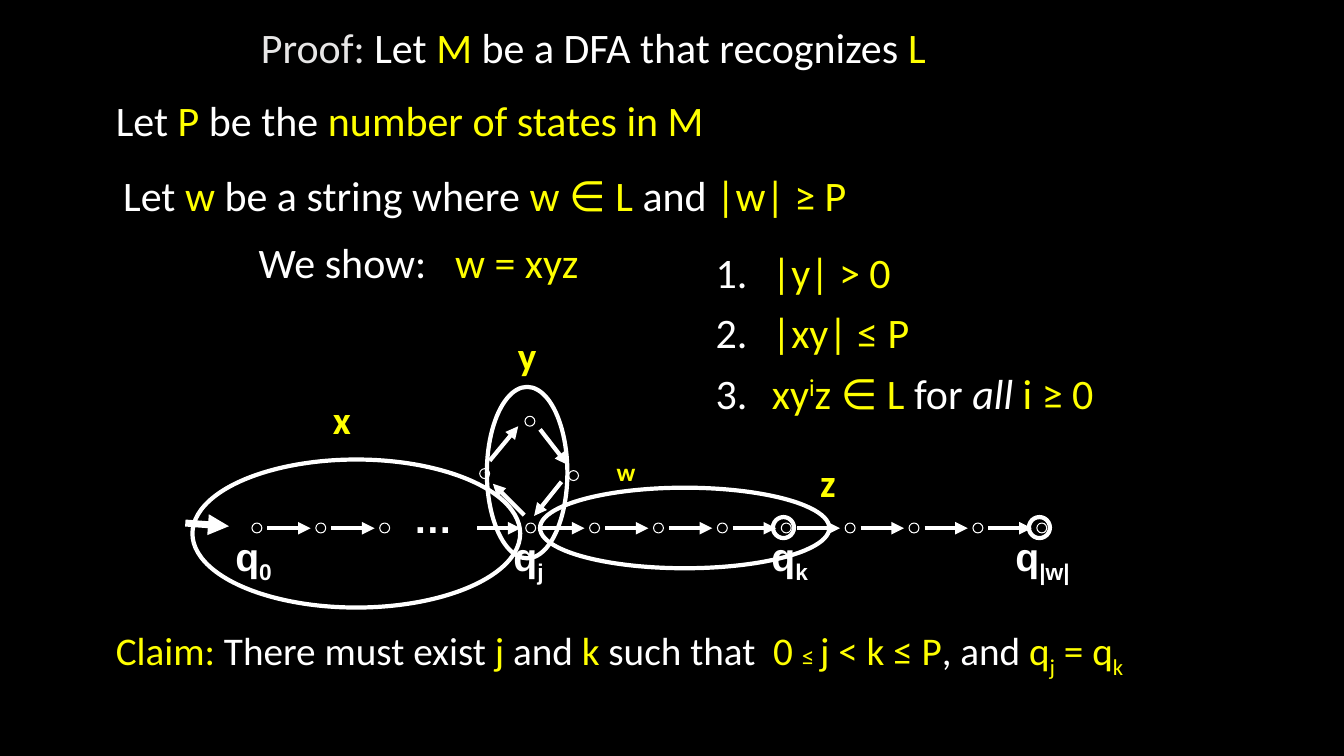
"""Build the slide that proves the pumping lemma with a chain of states."""
from typing import NamedTuple

from lxml import etree
from pptx import Presentation
from pptx.dml.color import RGBColor
from pptx.enum import shapes, text
from pptx.oxml import ns
from pptx.util import Cm, Pt

HUES = {"back": "000000", "white": "FFFFFF", "gold": "FFFF00", "gray": "E7E6E6"}
PITCH, GAP, REACH = 1.61, 0.39, 1.09
DOT, TOP, MID = 0.25, 13.18, 13.31
START, JOIN = 6.35, 13.25


class Run(NamedTuple):
    """A piece of text with its colour and script offset."""
    text: str
    hue: str = "gold"
    base: int = 0
    size: int = 0
    slant: bool = False


class Note(NamedTuple):
    """A text block with its place and font."""
    x: float
    y: float
    w: float
    h: float
    lines: list[list[Run]]
    size: int = 30
    face: str = "Calibri"
    bold: bool = False
    mid: bool = False
    wrap: bool = False
    count: bool = False


class Oval(NamedTuple):
    """An ellipse with its line width and fill choice."""
    x: float
    y: float
    w: float
    h: float
    line: float = 3
    full: bool = False


class Arrow(NamedTuple):
    """An arrow from one point to another."""
    x: float
    y: float
    tox: float
    toy: float
    line: float = 3


def white(words: str, base: int = 0) -> Run:
    """Return a white run."""
    return Run(words, "white", base)


def state(x: float, w: float, sub: str) -> Note:
    """Return the label of a state."""
    return Note(x, 13.28, w, 1.45, [[white("q"), white(sub, -25)]], 28, "Arial", True, True)


def part(x: float, y: float, name: str) -> Note:
    """Return the label of a part of the string."""
    return Note(x, y, 0.97, 1.45, [[Run(name)]], 28, bold=True, mid=True)


def dot(x: float, y: float = TOP) -> Oval:
    """Return the small circle of a state."""
    return Oval(x, y, DOT, DOT, 0.75, True)


def step(x: float) -> Arrow:
    """Return the arrow that leaves the state at x."""
    return Arrow(x + GAP, MID, x + GAP + REACH, MID)


TITLE = Note(6.32, 0.41, 20.42, 1.55, [[
    Run("Proof:", "gray"), white(" Let "), Run("M"),
    white(" be a DFA that recognizes "), Run("L")]], wrap=True)
GOALS = Note(17.78, 5.82, 10.82, 4.88, [
    [Run("|y| > 0")],
    [Run("|xy| ≤ P")],
    [Run("xy"), Run("i", base=30), Run("z ∈ L "), white("for "),
     Run("all ", "white", slant=True), Run("i ≥ 0")]], wrap=True, count=True)
NOTES = [
    Note(2.67, 2.26, 18.59, 1.55, [[
        white("Let "), Run("P"), white(" be the "), Run("number of states in M")]], wrap=True),
    Note(2.67, 4.14, 19.1, 1.55, [[
        white("Let "), Run("w"), white(" be a string where "), Run("w ∈ L "),
        white("and "), Run("|w| ≥ P")]], mid=True),
    Note(6.27, 5.84, 8.84, 1.55, [[white("We show:   "), Run("w = xyz")]]),
    Note(2.67, 15.67, 28.3, 1.45, [[
        Run("Claim:"), white(" There must exist "), Run("j"), white(" and "), Run("k"),
        white(" such that  "), Run("0 "), Run("≤ ", size=18), Run("j < k ≤ P"),
        white(", and "), Run("q"), Run("j", base=-25), Run(" = q"),
        Run("k", base=-25)]], 28, wrap=True),
    part(8.13, 9.83, "x"), part(12.8, 8.23, "y"), part(20.38, 11.43, "z"),
    Note(15.29, 11.38, 1.14, 1.22, [[Run("w")]], 18, bold=True),
    state(5.64, 1.5, "0"), state(12.67, 1.3, "j"),
    state(19.15, 1.5, "k"), state(25.27, 2.01, "|w|"),
    Note(10.16, 12.34, 1.5, 1.45, [[white("…")]], 28, "Arial", True, True),
]
HEAD = [START + PITCH * i for i in range(3)]
TAIL = [JOIN + PITCH * i for i in range(9)]
DOTS = [dot(x) for x in HEAD + TAIL]
DOTS += [dot(12.09, 11.81), dot(13.23, 10.49), dot(14.33, 11.86)]
ARROWS = [step(x) for x in HEAD[:-1] + [JOIN - PITCH] + TAIL[:-1]]
ARROWS += [
    Arrow(13.21, 12.98, 12.42, 12.19), Arrow(14.15, 12.14, 13.46, 13),
    Arrow(13.61, 10.82, 14.3, 11.71), Arrow(12.34, 11.61, 13.06, 10.74),
    Arrow(4.67, 13.18, 5.77, 13.26, 5),
]
RINGS = [
    Oval(4.85, 11.58, 8.26, 3.73), Oval(12.27, 9.75, 2.03, 4.32),
    Oval(13.61, 12.29, 7.29, 2.03),
    Oval(19.48, 13.03, 0.53, 0.53), Oval(25.93, 13.03, 0.53, 0.53),
]


def tint(hue: str) -> RGBColor:
    """Return the named colour."""
    return RGBColor.from_string(HUES[hue])


def tag(root, name: str, **keys: str):
    """Add a drawing element below root."""
    return etree.SubElement(root, ns.qn(name), **keys)


def number(para) -> None:
    """Give a paragraph a white hanging number."""
    para.line_spacing = 1.2
    para.space_before = Pt(0)
    props = para._p.get_or_add_pPr()
    props.set("marL", str(Cm(1.42)))
    props.set("indent", str(Cm(-1.42)))
    tag(tag(props, "a:buClr"), "a:srgbClr", val=HUES["white"])
    tag(props, "a:buFont", typeface="Calibri")
    tag(props, "a:buAutoNum", type="arabicPeriod")


def write(shape, note: Note) -> None:
    """Place a text shape and fill it."""
    shape.left, shape.top = Cm(note.x), Cm(note.y)
    shape.width, shape.height = Cm(note.w), Cm(note.h)
    frame = shape.text_frame
    frame.word_wrap = note.wrap
    frame.auto_size = text.MSO_AUTO_SIZE.NONE
    frame.vertical_anchor = text.MSO_ANCHOR.TOP
    for i, line in enumerate(note.lines):
        para = frame.add_paragraph() if i else frame.paragraphs[0]
        para.alignment = text.PP_ALIGN.CENTER if note.mid else text.PP_ALIGN.LEFT
        if note.count:
            number(para)
        font = para.font
        font.name, font.size, font.bold = note.face, Pt(note.size), note.bold
        for item in line:
            run = para.add_run()
            run.text = item.text
            run.font.color.rgb = tint(item.hue)
            if item.size:
                run.font.size = Pt(item.size)
            if item.slant:
                run.font.italic = True
            if item.base:
                run._r.get_or_add_rPr().set("baseline", str(item.base * 1000))


def ring(slide, oval: Oval) -> None:
    """Draw an ellipse."""
    shape = slide.shapes.add_shape(
        shapes.MSO_SHAPE.OVAL, Cm(oval.x), Cm(oval.y), Cm(oval.w), Cm(oval.h))
    shape.shadow.inherit = False
    shape.line.color.rgb, shape.line.width = tint("white"), Pt(oval.line)
    if oval.full:
        shape.fill.solid()
        shape.fill.fore_color.rgb = tint("back")
    else:
        shape.fill.background()


def link(slide, arrow: Arrow) -> None:
    """Draw an arrow."""
    shape = slide.shapes.add_connector(
        shapes.MSO_CONNECTOR.STRAIGHT,
        Cm(arrow.x), Cm(arrow.y), Cm(arrow.tox), Cm(arrow.toy))
    shape.line.color.rgb, shape.line.width = tint("white"), Pt(arrow.line)
    tag(shape.line._get_or_add_ln(), "a:tailEnd", type="triangle")
    tag(shape._element.spPr, "a:effectLst")


def main() -> None:
    """Build and save the slide."""
    deck = Presentation()
    deck.slide_width, deck.slide_height = Cm(33.87), Cm(19.05)
    slide = deck.slides.add_slide(deck.slide_layouts[1])
    slide.background.fill.solid()
    slide.background.fill.fore_color.rgb = tint("back")
    write(slide.shapes.title, TITLE)
    write(slide.placeholders[1], GOALS)
    for arrow in ARROWS:
        link(slide, arrow)
    for oval in DOTS + RINGS:
        ring(slide, oval)
    for note in NOTES:
        write(slide.shapes.add_textbox(0, 0, 0, 0), note)
    deck.save("out.pptx")


if __name__ == "__main__":
    main()
